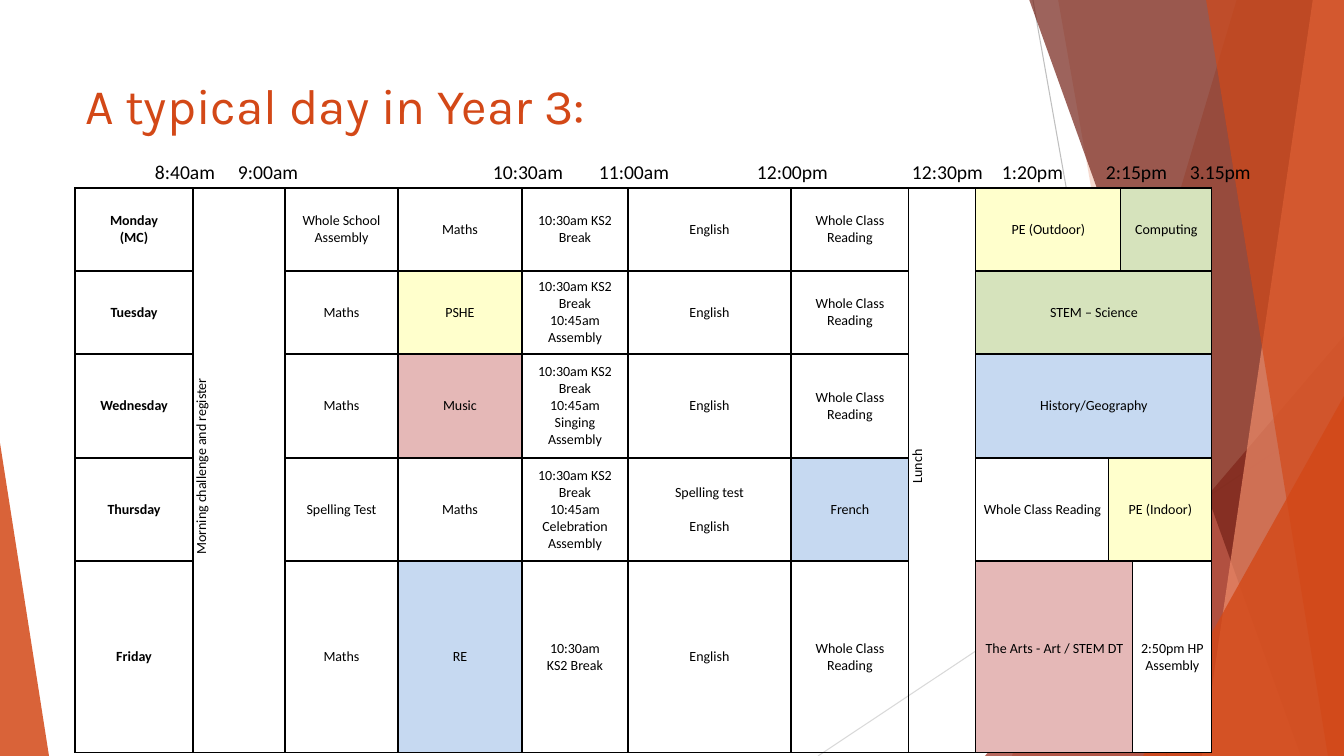
from lxml import etree
from pptx import Presentation
from pptx import util as u
from pptx.dml.color import RGBColor
from pptx.enum import shapes, text
from pptx.oxml.ns import qn

PX = 914400 / 100.8
W, H = 1344, 756

C = {
    "orange": "D34817", "rust": "9B2D1F", "maroon": "742217", "peach": "EF8C6A",
    "grey": "BFBFBF", "pale": "D9D9D9", "black": "000000", "white": "FFFFFF",
    "yellow": "FFFFCC", "green": "D6E3BC", "pink": "E5B8B7", "blue": "C6D9F1",
}

COLS = [118, 92, 113, 124, 106, 163, 118, 67, 133, 12, 12, 79]
ROWS = [83, 83, 104, 103, 192]
BREAK = "10:30am KS2 Break"
READING = "Whole Class Reading"

WEEK = [
    ["Monday\n(MC)", "Whole School Assembly", "Maths", BREAK, "English", READING],
    ["Tuesday", "Maths", "PSHE", BREAK + "\n10:45am Assembly", "English", READING],
    ["Wednesday", "Maths", "Music", BREAK + "\n10:45am Singing Assembly", "English", READING],
    ["Thursday", "Spelling Test", "Maths", BREAK + "\n10:45am Celebration Assembly",
     "Spelling test\nEnglish", "French"],
    ["Friday", "Maths", "RE", "10:30am\nKS2 Break", "English", READING],
]
WEEK_COLS = [0, 2, 3, 4, 5, 6]
FILLS = {
    (1, 3): "yellow", (2, 3): "pink", (4, 3): "blue",
    (1, 6): "white", (2, 6): "white", (3, 6): "blue",
}
AFTERNOON = [
    [(8, 9, "PE (Outdoor)", "yellow"), (10, 11, "Computing", "green")],
    [(8, 11, "STEM – Science", "green")],
    [(8, 11, "History/Geography", "blue")],
    [(8, 8, READING, "white"), (9, 11, "PE (Indoor)", "yellow")],
    [(8, 10, "The Arts - Art / STEM DT", "pink"), (11, 11, "2:50pm HP Assembly", "white")],
]
TIMES = [
    ("8:40am", 155), ("9:00am", 238), ("10:30am", 493), ("11:00am", 599), ("12:00pm", 757),
    ("12:30pm", 912), ("1:20pm", 1002), ("2:15pm", 1106), ("3.15pm", 1190),
]


def px(n):
    return u.Emu(round(n * PX))


def rgb(name):
    return RGBColor.from_string(C[name])


def write(tf, content, size=10, font="Calibri", color="black", bold=False,
          align=text.PP_ALIGN.LEFT, gap=0):
    for i, line in enumerate(content.split("\n")):
        p = tf.paragraphs[0] if i == 0 else tf.add_paragraph()
        p.alignment = align
        p.space_before = u.Pt(gap if i else 0)
        r = p.add_run()
        r.text = line
        r.font.size = u.Pt(size)
        r.font.name = font
        r.font.bold = bold
        r.font.color.rgb = rgb(color)


def paint(sp, color, opacity):
    sp.shadow.inherit = False
    sp.line.fill.background()
    sp.fill.solid()
    sp.fill.fore_color.rgb = rgb(color)
    clr = sp.fill._xPr.find(qn("a:solidFill"))[0]
    etree.SubElement(clr, qn("a:alpha"), val=str(opacity * 1000))


def add_ray(s, x1, y1, x2, y2, color):
    ln = s.shapes.add_connector(shapes.MSO_CONNECTOR.STRAIGHT, px(x1), px(y1), px(x2), px(y2))
    ln.line.color.rgb = rgb(color)
    ln.line.width = u.Pt(0.75)
    etree.SubElement(ln._element.spPr, qn("a:effectLst"))


def add_shard(s, top, bottom, color, opacity):
    fb = s.shapes.build_freeform(top, -1, scale=PX)
    fb.add_line_segments([(W, -1), (W, H), (bottom, H)], close=True)
    paint(fb.convert_to_shape(), color, opacity)


def add_wedge(s, x, y, w, h, apex, color, opacity):
    sp = s.shapes.add_shape(shapes.MSO_SHAPE.ISOSCELES_TRIANGLE, px(x), px(y), px(w), px(h))
    sp.adjustments[0] = apex
    paint(sp, color, opacity)


def add_backdrop(s):
    add_ray(s, 1033, 0, 1167, H, "grey")
    add_ray(s, W, 406, 818, H, "pale")
    add_shard(s, 1237, 1012, "orange", 30)
    add_shard(s, 1058, 1191, "orange", 20)
    add_wedge(s, 985, 336, 359, 420, 1, "rust", 72)
    add_shard(s, 1029, 1301, "maroon", 70)
    add_shard(s, 1313, 1202, "peach", 70)
    add_shard(s, 1206, 1328, "orange", 65)
    add_wedge(s, 1143, 396, 201, 360, 1, "orange", 80)
    add_wedge(s, 0, 443, 49, 313, 0, "orange", 85)


def add_borders(cell):
    tcPr = cell._tc.get_or_add_tcPr()
    for i, side in enumerate(("a:lnL", "a:lnR", "a:lnT", "a:lnB")):
        ln = etree.Element(qn(side), w=str(u.Pt(1)))
        fill = etree.SubElement(ln, qn("a:solidFill"))
        etree.SubElement(fill, qn("a:srgbClr"), val=C["black"])
        tcPr.insert(i, ln)


def fill_cell(cell, content, color=None, **fmt):
    if color:
        cell.fill.solid()
        cell.fill.fore_color.rgb = rgb(color)
    write(cell.text_frame, content, align=text.PP_ALIGN.CENTER, **fmt)


def add_timetable(s):
    frame = s.shapes.add_table(len(ROWS), len(COLS), px(75), px(188), px(sum(COLS)), px(sum(ROWS)))
    tbl = frame.table
    tbl.first_row = tbl.horz_banding = False
    for col, w in zip(tbl.columns, COLS):
        col.width = px(w)
    for row, h in zip(tbl.rows, ROWS):
        row.height = px(h)
    for cell in tbl.iter_cells():
        cell.fill.background()
        cell.vertical_anchor = text.MSO_ANCHOR.MIDDLE
        cell.margin_left = cell.margin_right = px(7)
        cell.margin_top = cell.margin_bottom = 0
        add_borders(cell)

    for c, label in ((1, "Morning challenge and register"), (7, "Lunch")):
        cell = tbl.cell(0, c)
        cell.merge(tbl.cell(len(ROWS) - 1, c))
        fill_cell(cell, label)
        cell._tc.get_or_add_tcPr().set("vert", "vert270")
        cell.text_frame.paragraphs[0]._p.get_or_add_pPr().set("marL", str(px(8)))

    for r, (lessons, blocks) in enumerate(zip(WEEK, AFTERNOON)):
        for c, lesson in zip(WEEK_COLS, lessons):
            gap = 12 if lesson.startswith("Spelling test") else 0
            fill_cell(tbl.cell(r, c), lesson, FILLS.get((r, c)), bold=c == 0, gap=gap)
        for first, last, lesson, color in blocks:
            cell = tbl.cell(r, first)
            if last > first:
                cell.merge(tbl.cell(r, last))
            fill_cell(cell, lesson, color)
    tbl.cell(4, 8).margin_bottom = px(16)


def add_times(s):
    left, inset = 93, 10
    sp = s.shapes.add_textbox(px(left), px(155), px(1223), px(34))
    tf = sp.text_frame
    tf.word_wrap = True
    tf.margin_left = px(inset)
    write(tf, "".join("\t" + label for label, _ in TIMES), size=14)
    tabs = etree.SubElement(tf.paragraphs[0]._p.get_or_add_pPr(), qn("a:tabLst"))
    for _, x in TIMES:
        etree.SubElement(tabs, qn("a:tab"), pos=str(px(x - left - inset)), algn="l")


def add_title(s, content):
    sp = s.shapes.title
    sp.left, sp.top, sp.width, sp.height = px(75), px(68), px(947), px(97)
    tf = sp.text_frame
    tf.vertical_anchor = text.MSO_ANCHOR.TOP
    tf.margin_left = px(10)
    tf.margin_top = px(7)
    write(tf, content, size=35.5, font="Karla", color="orange")


def main():
    prs = Presentation()
    prs.slide_width, prs.slide_height = px(W), px(H)
    s = prs.slides.add_slide(prs.slide_layouts[5])
    add_backdrop(s)
    add_title(s, "A typical day in Year 3:")
    add_timetable(s)
    add_times(s)
    prs.save("out.pptx")


if __name__ == "__main__":
    main()
